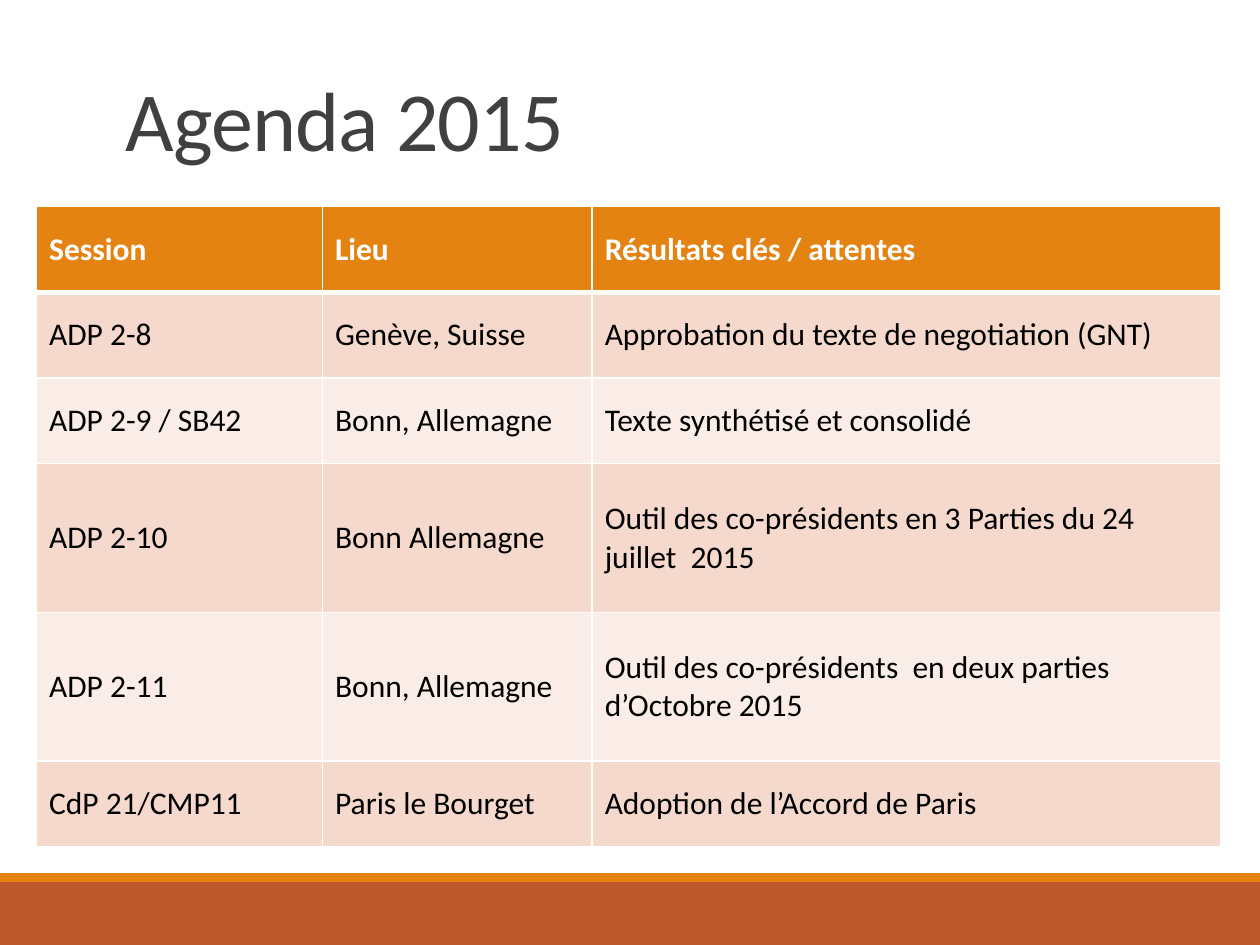
from dataclasses import dataclass

from lxml import etree
from pptx import Presentation
from pptx.dml.color import RGBColor
from pptx.enum.shapes import MSO_SHAPE
from pptx.enum.text import MSO_ANCHOR
from pptx.oxml.ns import qn
from pptx.util import Inches, Pt

RECTANGLE = MSO_SHAPE.RECTANGLE
MIDDLE, BOTTOM = MSO_ANCHOR.MIDDLE, MSO_ANCHOR.BOTTOM

# Content
TITLE = "Agenda 2015"
ROWS = [
    ("Session", "Lieu", "Résultats clés / attentes"),
    ("ADP 2-8", "Genève, Suisse", "Approbation du texte de negotiation (GNT)"),
    ("ADP 2-9 / SB42", "Bonn, Allemagne", "Texte synthétisé et consolidé"),
    ("ADP 2-10", "Bonn Allemagne", "Outil des co-présidents en 3 Parties du 24 juillet  2015"),
    ("ADP 2-11", "Bonn, Allemagne", "Outil des co-présidents  en deux parties d’Octobre 2015"),
    ("CdP 21/CMP11", "Paris le Bourget", "Adoption de l’Accord de Paris"),
]


@dataclass(frozen=True)
class Theme:
    font: str = "Calibri"
    title_size: int = 48
    table_size: int = 18
    title: str = "404040"
    accent: str = "E48312"
    footer: str = "BD582C"
    white: str = "FFFFFF"
    body: str = "000000"
    bands: tuple = ("F5D9CC", "FAEDE7")


THEME = Theme()

# Layout in inches
WIDTH, HEIGHT = 10, 7.5
FOOTER_HEIGHT, STRIPE_HEIGHT = 0.5, 0.07
TITLE_BOX = (0.9, 0.31, 8.25, 1.08)
TABLE_LEFT, TABLE_TOP = 0.29, 1.64
COLUMN_WIDTHS = (2.27, 2.14, 4.99)
SINGLE, DOUBLE = 0.68, 1.18
ROW_HEIGHTS = (SINGLE, SINGLE, SINGLE, DOUBLE, DOUBLE, SINGLE)


def add_run(paragraph, text, size, color, bold=False):
    run = paragraph.add_run()
    run.text = text
    run.font.name = THEME.font
    run.font.size = Pt(size)
    run.font.bold = bold
    run.font.color.rgb = RGBColor.from_string(color)
    return run


def add_band(slide, top, height, color):
    shape = slide.shapes.add_shape(
        RECTANGLE, 0, Inches(top), Inches(WIDTH), Inches(height))
    shape.shadow.inherit = False
    shape.fill.solid()
    shape.fill.fore_color.rgb = RGBColor.from_string(color)
    shape.line.fill.background()


def add_title(slide):
    frame = slide.shapes.add_textbox(*map(Inches, TITLE_BOX)).text_frame
    frame.word_wrap = True
    frame.vertical_anchor = BOTTOM
    paragraph = frame.paragraphs[0]
    paragraph.line_spacing = 0.85
    run = add_run(paragraph, TITLE, THEME.title_size, THEME.title)
    run.font._element.set("spc", "-50")


def set_borders(cell, widths):
    properties = cell._tc.get_or_add_tcPr()
    for side, width in widths.items():
        line = etree.SubElement(properties, qn(f"a:ln{side}"), w=str(Pt(width)))
        fill = etree.SubElement(line, qn("a:solidFill"))
        etree.SubElement(fill, qn("a:srgbClr"), val=THEME.white)


def add_agenda(slide):
    table = slide.shapes.add_table(
        len(ROWS), len(COLUMN_WIDTHS), Inches(TABLE_LEFT), Inches(TABLE_TOP),
        Inches(sum(COLUMN_WIDTHS)), Inches(sum(ROW_HEIGHTS))).table
    for column, width in zip(table.columns, COLUMN_WIDTHS):
        column.width = Inches(width)
    for index, (row, height, texts) in enumerate(zip(table.rows, ROW_HEIGHTS, ROWS)):
        row.height = Inches(height)
        header = index == 0
        fill = THEME.accent if header else THEME.bands[(index - 1) % 2]
        color = THEME.white if header else THEME.body
        # The header is set off by a thicker rule
        borders = {"L": 1, "R": 1, "T": 3 if index == 1 else 1, "B": 3 if header else 1}
        for cell, text in zip(row.cells, texts):
            set_borders(cell, borders)
            cell.fill.solid()
            cell.fill.fore_color.rgb = RGBColor.from_string(fill)
            cell.vertical_anchor = MIDDLE
            add_run(cell.text_frame.paragraphs[0], text, THEME.table_size, color, header)


def main():
    presentation = Presentation()
    presentation.slide_width = Inches(WIDTH)
    presentation.slide_height = Inches(HEIGHT)
    slide = presentation.slides.add_slide(presentation.slide_layouts[6])

    # Footer bands
    footer_top = HEIGHT - FOOTER_HEIGHT
    add_band(slide, footer_top, FOOTER_HEIGHT, THEME.footer)
    add_band(slide, footer_top - STRIPE_HEIGHT, STRIPE_HEIGHT, THEME.accent)

    # Title and agenda table
    add_title(slide)
    add_agenda(slide)
    presentation.save("out.pptx")


if __name__ == "__main__":
    main()
